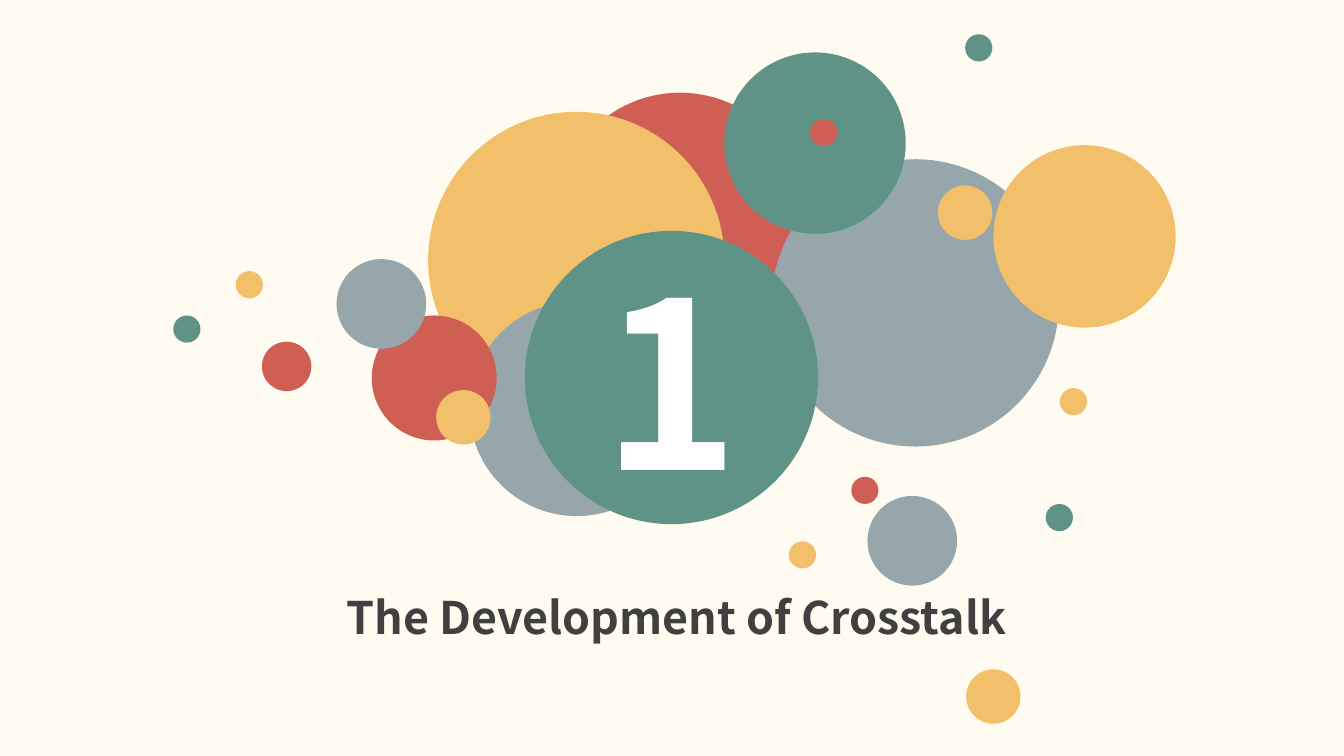
from pptx import Presentation
from pptx.dml.color import RGBColor
from pptx.enum.shapes import MSO_SHAPE
from pptx.enum.text import MSO_ANCHOR, MSO_AUTO_SIZE, PP_ALIGN
from pptx.util import Inches, Pt

SECTION_NUMBER = "1"
SECTION_TITLE = "The Development of Crosstalk"
FONT = "Noto Sans CJK SC"
CREAM, WHITE, CHARCOAL = "FFFBF0", "FFFFFF", "404040"
RED, YELLOW, GREY, GREEN = "CF5F55", "F2C06B", "97A6AB", "5F9387"
DOT, SMALL, MEDIUM = 0.27, 0.54, 0.89

# left, top, diameter, colour; from back to front
BUBBLES = [
    (5.52, 0.92, 2.46, RED),
    (4.25, 1.11, 2.94, YELLOW),
    (4.66, 2.99, 2.13, GREY),
    (7.66, 1.58, 2.85, GREY),
    (7.19, 0.52, 1.8, GREEN),
    (3.69, 3.13, 1.24, RED),
    (8.61, 4.92, MEDIUM, GREY),
    (8.45, 4.73, DOT, RED),
    (7.83, 5.37, DOT, YELLOW),
    (10.38, 5, DOT, GREEN),
    (9.59, 6.64, SMALL, YELLOW),
    (9.86, 1.44, 1.81, YELLOW),
    (3.34, 2.57, MEDIUM, GREY),
    (2.6, 3.39, 0.49, RED),
    (2.34, 2.69, DOT, YELLOW),
    (1.72, 3.13, DOT, GREEN),
    (4.33, 3.87, SMALL, YELLOW),
    (8.04, 1.18, DOT, RED),
    (10.52, 3.85, DOT, YELLOW),
    (9.58, 0.34, DOT, GREEN),
    (9.31, 1.84, SMALL, YELLOW),
]
NUMBER_BUBBLE = (5.21, 2.29, 2.91, GREEN)
TITLE_BOX = (3.34, 5.8, 7.37, 0.64)


def paint(fill, colour):
    fill.solid()
    fill.fore_color.rgb = RGBColor.from_string(colour)


def add_bubble(slide, left, top, diameter, colour):
    bubble = slide.shapes.add_shape(
        MSO_SHAPE.OVAL, *map(Inches, (left, top, diameter, diameter)))
    bubble.shadow.inherit = False
    paint(bubble.fill, colour)
    bubble.line.fill.background()
    return bubble


def write(frame, text, size, colour, align):
    frame.word_wrap = True
    paragraph = frame.paragraphs[0]
    paragraph.text = text
    paragraph.alignment = align
    font = paragraph.font
    font.name, font.size, font.bold = FONT, Pt(size), True
    paint(font.fill, colour)


def main():
    deck = Presentation()
    deck.slide_width, deck.slide_height = Inches(13.34), Inches(7.5)
    slide = deck.slides.add_slide(deck.slide_layouts[6])
    paint(slide.background.fill, CREAM)

    for bubble in BUBBLES:
        add_bubble(slide, *bubble)

    number = add_bubble(slide, *NUMBER_BUBBLE).text_frame
    number.vertical_anchor = MSO_ANCHOR.MIDDLE
    write(number, SECTION_NUMBER, 166, WHITE, PP_ALIGN.CENTER)

    title = slide.shapes.add_textbox(*map(Inches, TITLE_BOX)).text_frame
    title.auto_size = MSO_AUTO_SIZE.SHAPE_TO_FIT_TEXT
    write(title, SECTION_TITLE, 32, CHARCOAL, PP_ALIGN.LEFT)

    deck.save("out.pptx")


if __name__ == "__main__":
    main()
